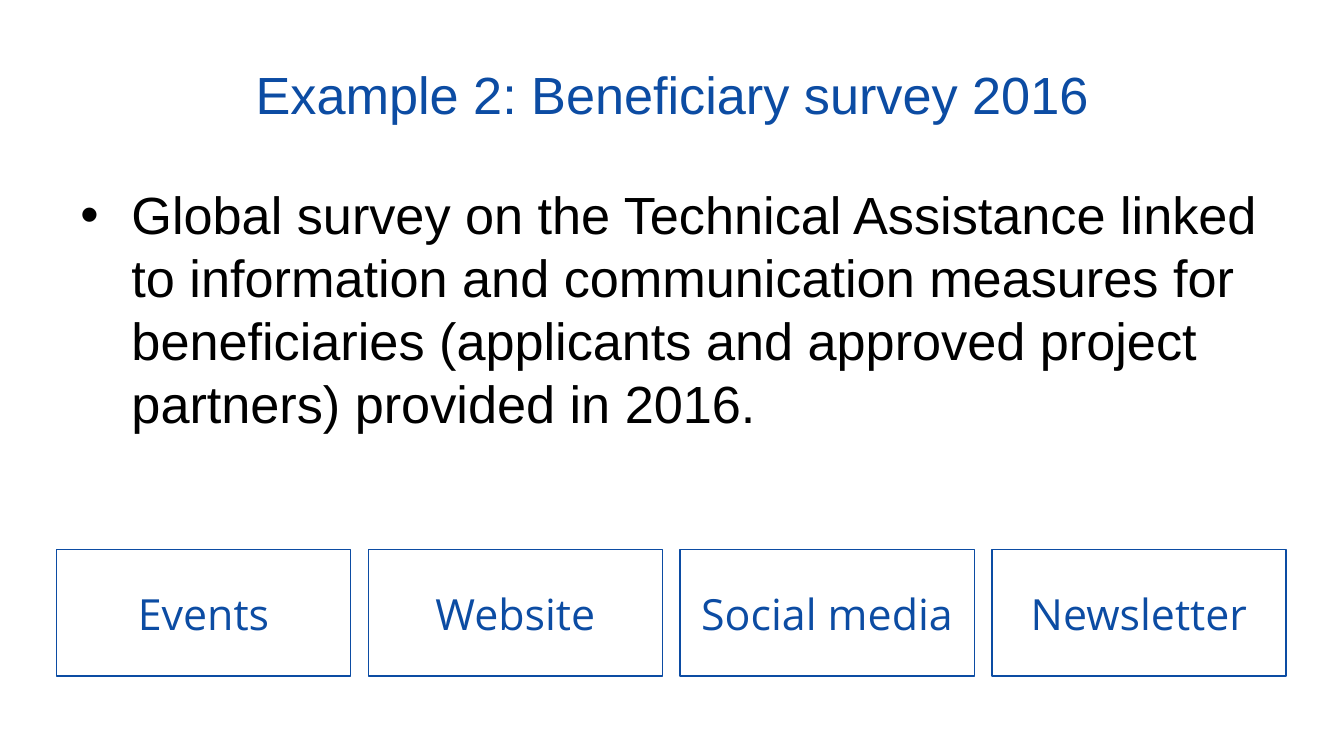
from dataclasses import dataclass

from lxml import etree
from pptx import Presentation
from pptx import util as u
from pptx.dml.color import RGBColor
from pptx.enum import shapes, text
from pptx.oxml.ns import qn


@dataclass(frozen=True)
class Theme:
    blue: RGBColor = RGBColor(0x0C, 0x4C, 0xA3)
    black: RGBColor = RGBColor(0, 0, 0)
    white: RGBColor = RGBColor(255, 255, 255)
    main_font: str = "Arial"
    box_font: str = "Open Sans"
    main_size: int = 28
    box_size: int = 23
    box_opacity: int = 90


@dataclass(frozen=True)
class ChannelRow:
    """Equal boxes in a row, in inches."""
    left: float = 0.42
    top: float = 4.09
    width: float = 2.19
    height: float = 0.94
    pitch: float = 2.32


THEME = Theme()
ROW = ChannelRow()
CHANNELS = ("Events", "Website", "Social media", "Newsletter")
SURVEY_TEXT = (
    "Global survey on the Technical Assistance linked to information and "
    "communication measures for beneficiaries (applicants and approved "
    "project partners) provided in 2016."
)


def write(shape, content: str, font: str, size: int, color: RGBColor,
          alignment=text.PP_ALIGN.CENTER, anchor=text.MSO_ANCHOR.MIDDLE):
    """Fill a shape with one formatted paragraph and return it."""
    frame = shape.text_frame
    frame.text = content
    frame.word_wrap = True
    frame.auto_size = text.MSO_AUTO_SIZE.NONE
    frame.vertical_anchor = anchor
    paragraph = frame.paragraphs[0]
    paragraph.alignment = alignment
    paragraph.font.name = font
    paragraph.font.size = u.Pt(size)
    paragraph.font.color.rgb = color
    return paragraph


def add_bullet(paragraph, indent: float, space_percent: int) -> None:
    """Give a paragraph a hanging bullet and relative space before it."""
    properties = paragraph._p.get_or_add_pPr()
    properties.set("marL", str(u.Inches(indent)))
    properties.set("indent", str(-u.Inches(indent)))
    space = etree.Element(qn("a:spcBef"))
    etree.SubElement(space, qn("a:spcPct"), val=str(space_percent * 1000))
    bullet_font = etree.Element(qn("a:buFont"), typeface=THEME.main_font)
    bullet = etree.Element(qn("a:buChar"), char="•")
    for element in (space, bullet_font, bullet):
        properties.insert_element_before(
            element, "a:tabLst", "a:defRPr", "a:extLst")


def add_channel(slide, column: int, label: str) -> None:
    box = slide.shapes.add_shape(
        shapes.MSO_SHAPE.RECTANGLE,
        u.Inches(ROW.left + column * ROW.pitch), u.Inches(ROW.top),
        u.Inches(ROW.width), u.Inches(ROW.height))
    box.shadow.inherit = False
    box.fill.solid()
    box.fill.fore_color.rgb = THEME.white
    color = box._element.spPr.find(qn("a:solidFill"))[0]
    etree.SubElement(color, qn("a:alpha"), val=str(THEME.box_opacity * 1000))
    box.line.color.rgb = THEME.blue
    box.line.width = u.Pt(0.75)
    write(box, label, THEME.box_font, THEME.box_size, THEME.blue)


def main() -> None:
    # Widescreen slide, 16:9
    presentation = Presentation()
    presentation.slide_width = u.Inches(10)
    presentation.slide_height = presentation.slide_width * 9 // 16
    slide = presentation.slides.add_slide(presentation.slide_layouts[5])

    # Title
    title = slide.shapes.title
    title.left, title.top = u.Inches(0.5), u.Inches(0.23)
    title.width, title.height = u.Inches(9), u.Inches(0.94)
    write(title, "Example 2: Beneficiary survey 2016",
          THEME.main_font, THEME.main_size, THEME.blue)

    # Survey description
    body = slide.shapes.add_textbox(
        u.Inches(0.5), u.Inches(1.31), u.Inches(8.99), u.Inches(3.71))
    paragraph = write(body, SURVEY_TEXT, THEME.main_font, THEME.main_size,
                      THEME.black, text.PP_ALIGN.LEFT, text.MSO_ANCHOR.TOP)
    add_bullet(paragraph, indent=0.38, space_percent=20)

    # Communication channels
    for column, label in enumerate(CHANNELS):
        add_channel(slide, column, label)

    presentation.save("out.pptx")


if __name__ == "__main__":
    main()
